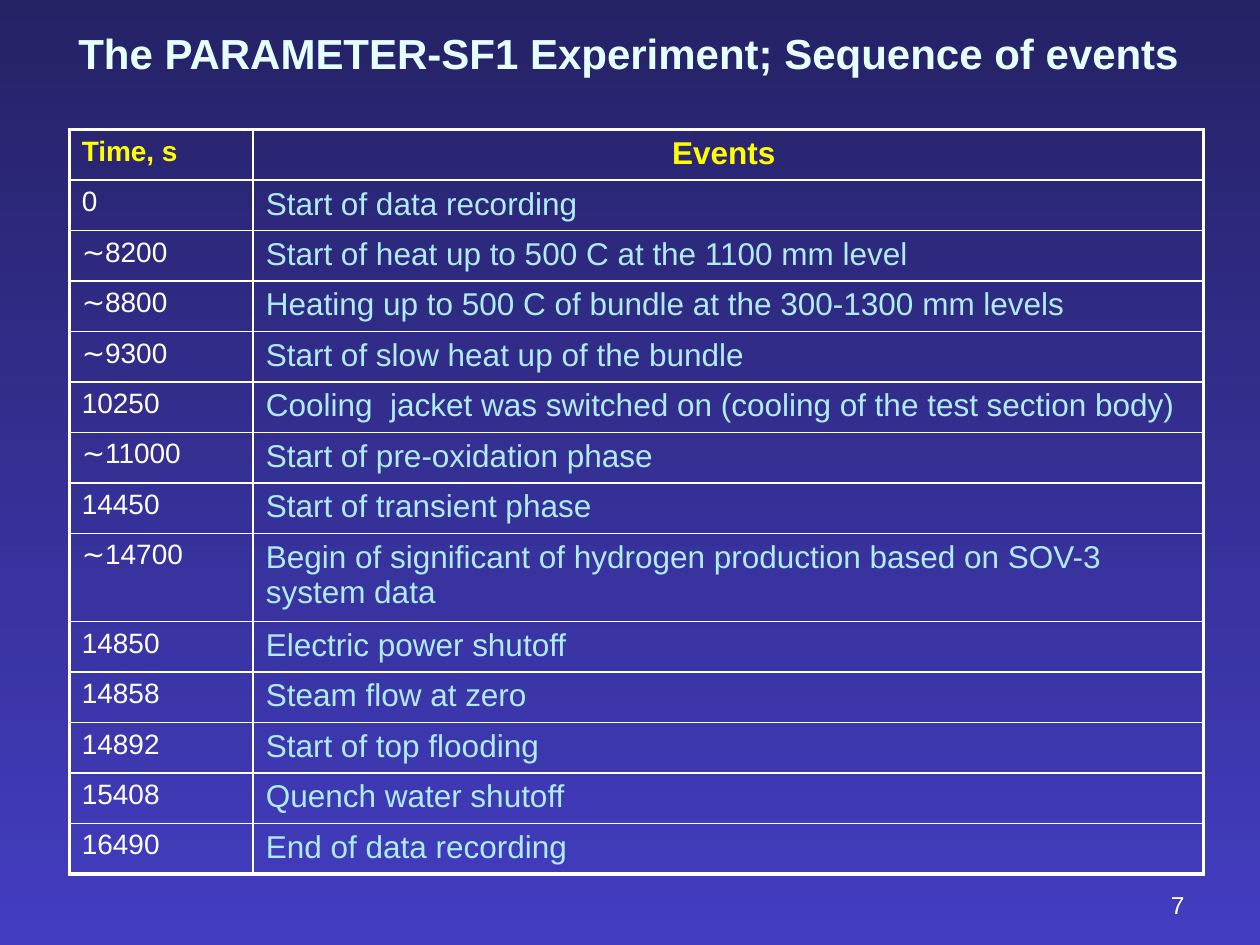
from lxml.etree import SubElement
from pptx import Presentation
from pptx.dml.color import RGBColor
from pptx.enum.text import MSO_ANCHOR as Anchor, PP_ALIGN as Align
from pptx.oxml.ns import qn
from pptx.util import Inches, Pt

WHITE, YELLOW, PALE_CYAN = "FFFFFF", "FFFF00", "B0ECF6"
THIN, THICK = 1, 2.25
ROW_HEIGHT, TALL_ROW_HEIGHT = 0.4, 0.7
TIME_WIDTH = 1.46

EVENTS = [
    ("0", "Start of data recording"),
    ("∼8200", "Start of heat up to 500 С at the 1100 mm level"),
    ("∼8800", "Heating up to 500 С of bundle at the 300-1300 mm levels"),
    ("∼9300", "Start of slow heat up of the bundle"),
    ("10250", "Cooling  jacket was switched on (cooling of the test section body)"),
    ("∼11000", "Start of pre-oxidation phase"),
    ("14450", "Start of transient phase"),
    ("∼14700", "Begin of significant of hydrogen production based on SOV-3 system data"),
    ("14850", "Electric power shutoff"),
    ("14858", "Steam flow at zero"),
    ("14892", "Start of top flooding"),
    ("15408", "Quench water shutoff"),
    ("16490", "End of data recording"),
]
TWO_LINE_TIME = "∼14700"


def color(value):
    return RGBColor.from_string(value)


def write(frame, text, size, fill=WHITE, bold=False, align=Align.LEFT):
    para = frame.paragraphs[0]
    para.alignment = align
    span = para.add_run()
    span.text = text
    span.font.name = "Arial"
    span.font.size = Pt(size)
    span.font.bold = bold
    span.font.color.rgb = color(fill)


def set_borders(cell, **widths):
    """Draw white cell borders; widths are points keyed by L, R, T and B."""
    props = cell._tc.get_or_add_tcPr()
    for index, side in enumerate("LRTB"):
        line = props.makeelement(qn(f"a:ln{side}"), {"w": str(Pt(widths[side]))})
        fill = SubElement(line, qn("a:solidFill"))
        SubElement(fill, qn("a:srgbClr"), val=WHITE)
        props.insert(index, line)


def paint_background(page):
    fill = page.background.fill
    fill.gradient()
    fill.gradient_angle = 270
    for stop, value in zip(fill.gradient_stops, ("262266", "433DC1")):
        stop.color.rgb = color(value)


def add_title(page, left, top, width, height):
    title = page.shapes.title
    title.left, title.top = Inches(left), Inches(top)
    title.width, title.height = Inches(width), Inches(height)
    frame = title.text_frame
    frame.word_wrap = False
    frame.vertical_anchor = Anchor.MIDDLE
    write(frame, "The PARAMETER-SF1 Experiment; Sequence of events", 24,
          fill="E5FFFF", bold=True, align=Align.CENTER)


def add_events_table(page, left, top, width):
    rows = [("Time, s", "Events ")] + EVENTS
    heights = [TALL_ROW_HEIGHT if time == TWO_LINE_TIME else ROW_HEIGHT
               for time, _ in rows]
    table = page.shapes.add_table(
        len(rows), 2, Inches(left), Inches(top),
        Inches(width), Inches(sum(heights))).table
    table.first_row = table.horz_banding = False
    table.columns[0].width = Inches(TIME_WIDTH)
    table.columns[1].width = Inches(width - TIME_WIDTH)

    last = len(rows) - 1
    for row, (texts, height) in enumerate(zip(rows, heights)):
        table.rows[row].height = Inches(height)
        header = row == 0
        for column, text in enumerate(texts):
            cell = table.cell(row, column)
            cell.fill.background()
            set_borders(cell,
                        L=THICK if column == 0 else THIN,
                        R=THICK if column == 1 else THIN,
                        T=THICK if header else THIN,
                        B=THICK if row == last else THIN)
            write(cell.text_frame, text, (16, 18)[column],
                  fill=YELLOW if header else (WHITE, PALE_CYAN)[column],
                  bold=header,
                  align=Align.CENTER if header and column == 1 else Align.LEFT)


def add_page_number(page, left, top, width, height):
    box = page.shapes.add_textbox(Inches(left), Inches(top),
                                  Inches(width), Inches(height))
    frame = box.text_frame
    frame.word_wrap = True
    frame.vertical_anchor = Anchor.BOTTOM
    write(frame, "7", 14, align=Align.RIGHT)


def main():
    deck = Presentation()
    deck.slide_width, deck.slide_height = Inches(10), Inches(7.5)
    page = deck.slides.add_slide(deck.slide_layouts.get_by_name("Title Only"))
    paint_background(page)
    add_page_number(page, 7.17, 6.83, 2.33, 0.52)
    add_title(page, 0.51, 0.17, 8.96, 0.5)
    add_events_table(page, 0.55, 1.03, 9)
    deck.save("out.pptx")


if __name__ == "__main__":
    main()
